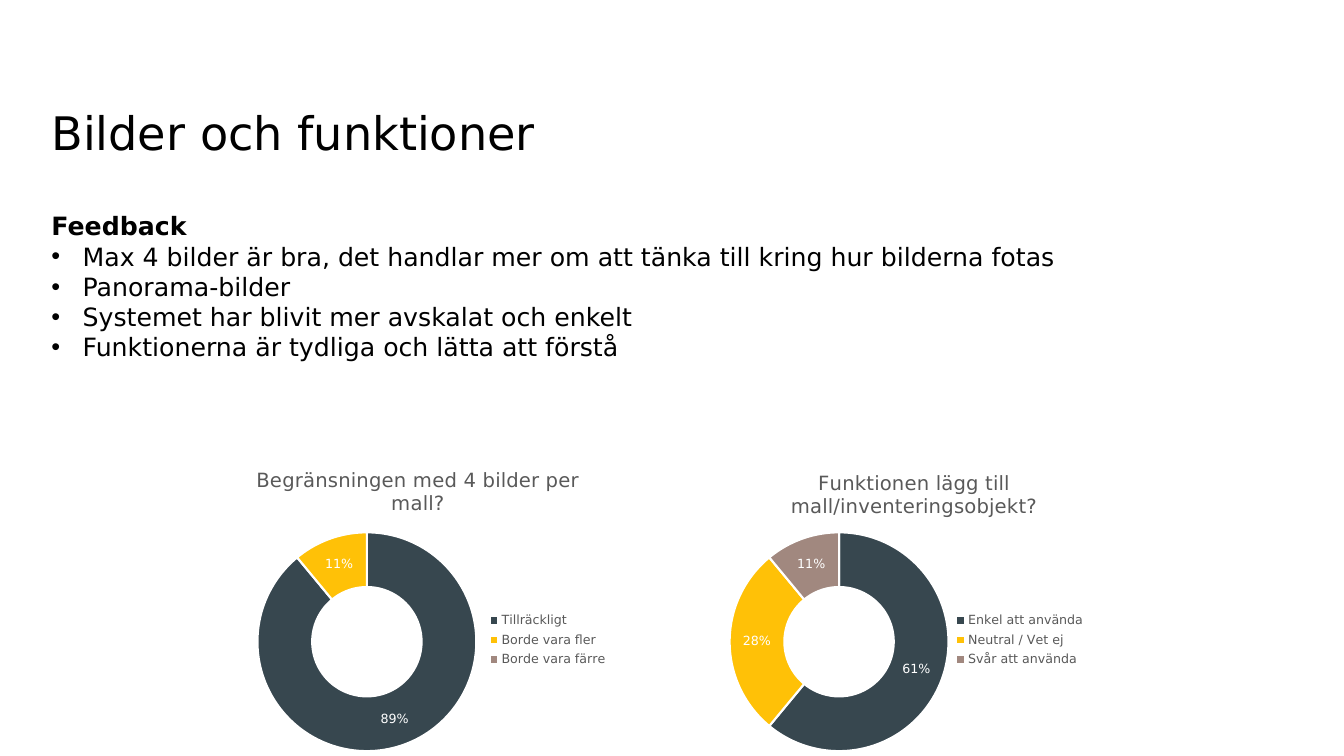
from lxml.etree import SubElement
from pptx import Presentation
from pptx.chart.data import CategoryChartData
from pptx.dml.color import RGBColor
from pptx.enum.chart import XL_CHART_TYPE as ChartType, XL_LEGEND_POSITION as LegendPosition
from pptx.enum.text import MSO_ANCHOR as Anchor
from pptx.oxml.ns import qn
from pptx.util import Inches, Pt

FONT = "DejaVu Sans"
SLICE_COLORS = ["37474F", "FFC107", "A1887F"]
FEEDBACK = [
    "Max 4 bilder är bra, det handlar mer om att tänka till kring hur bilderna fotas",
    "Panorama-bilder",
    "Systemet har blivit mer avskalat och enkelt",
    "Funktionerna är tydliga och lätta att förstå",
]


def rgb(color):
    return RGBColor.from_string(color)


def style_font(font, size, color, bold=False):
    font.name = FONT
    font.size = Pt(size)
    font.bold = bold
    font.color.rgb = rgb(color)


def add_text_frame(page, box):
    frame = page.shapes.add_textbox(*map(Inches, box)).text_frame
    frame.word_wrap = True
    frame.margin_left = frame.margin_right = frame.margin_top = frame.margin_bottom = 0
    return frame


def add_heading(page, box):
    frame = add_text_frame(page, box)
    frame.vertical_anchor = Anchor.BOTTOM
    para = frame.paragraphs[0]
    para.text = "Bilder och funktioner"
    style_font(para.font, 33, "000000")


def make_bullet(para):
    properties = para._p.get_or_add_pPr()
    properties.set("marL", str(Inches(0.31)))
    properties.set("indent", str(-Inches(0.31)))
    SubElement(properties, qn("a:buFont"), typeface="Arial")
    SubElement(properties, qn("a:buChar"), char="•")


def add_feedback(page, box):
    frame = add_text_frame(page, box)
    heading = frame.paragraphs[0]
    heading.text = "Feedback"
    style_font(heading.font, 18, "000000", bold=True)
    for line in FEEDBACK:
        para = frame.add_paragraph()
        para.text = line
        style_font(para.font, 18, "000000")
        make_bullet(para)


def place(element, after, **fractions):
    for old in element.findall(qn("c:layout")):
        element.remove(old)
    layout = SubElement(element, qn("c:layout"))
    manual = SubElement(layout, qn("c:manualLayout"))
    if after is None:
        SubElement(manual, qn("c:layoutTarget"), val="inner")
        element.insert(0, layout)
    else:
        element.find(qn(after)).addnext(layout)
    for axis in "xy":
        SubElement(manual, qn(f"c:{axis}Mode"), val="edge")
    for name, value in fractions.items():
        SubElement(manual, qn(f"c:{name}"), val=str(value))


def add_doughnut(page, box, title, answers, title_at, ring_left):
    data = CategoryChartData()
    data.categories = answers.keys()
    data.add_series("Series 1", answers.values())
    chart = page.shapes.add_chart(ChartType.DOUGHNUT, *map(Inches, box), data).chart
    style_font(chart.font, 10, "000000")

    chart.has_title = True
    para = chart.chart_title.text_frame.paragraphs[0]
    para.text = title
    style_font(para.font, 14, "595959")
    chart.chart_title.include_in_layout = False
    place(chart.chart_title._element, "c:tx", x=title_at[0], y=title_at[1])

    chart.has_legend = True
    chart.legend.position = LegendPosition.RIGHT
    chart.legend.include_in_layout = False
    style_font(chart.legend.font, 9, "595959")
    place(chart.legend._element, "c:legendPos", x=round(ring_left + 0.46, 2), y=0.51, w=0.3, h=0.2)

    plot = chart.plots[0]
    plot.vary_by_categories = True
    for index, color in enumerate(SLICE_COLORS):
        slice_format = plot.series[0].points[index].format
        slice_format.fill.solid()
        slice_format.fill.fore_color.rgb = rgb(color)
        slice_format.line.color.rgb = rgb("FFFFFF")
        slice_format.line.width = Pt(1.5)
    plot.has_data_labels = True
    labels = plot.data_labels
    labels.show_percentage = True
    labels.show_value = False
    labels.number_format = "0%;;"
    labels.number_format_is_linked = False
    style_font(labels.font, 9, "FFFFFF")
    plot._element.find(qn("c:holeSize")).set("val", "50")
    place(chart._chartSpace.chart.plotArea, None, x=ring_left, y=0.27, w=0.46, h=0.69)


def main():
    deck = Presentation()
    deck.slide_width, deck.slide_height = Inches(13.33), Inches(7.5)
    page = deck.slides.add_slide(deck.slide_layouts[6])
    add_heading(page, (0.51, 0.43, 9.45, 1.15))
    add_feedback(page, (0.51, 2.09, 11.41, 1.51))
    add_doughnut(
        page, (6.67, 4.43, 4.72, 3.15),
        "Funktionen lägg till mall/inventeringsobjekt?",
        {"Enkel att använda": 61, "Neutral / Vet ej": 28, "Svår att använda": 11},
        title_at=(0.24, 0.06), ring_left=0.12,
    )
    add_doughnut(
        page, (1.94, 4.43, 4.72, 3.15),
        "Begränsningen med 4 bilder per mall?",
        {"Tillräckligt": 89, "Borde vara fler": 11, "Borde vara färre": 0},
        title_at=(0.12, 0.05), ring_left=0.13,
    )
    deck.save("out.pptx")


if __name__ == "__main__":
    main()
